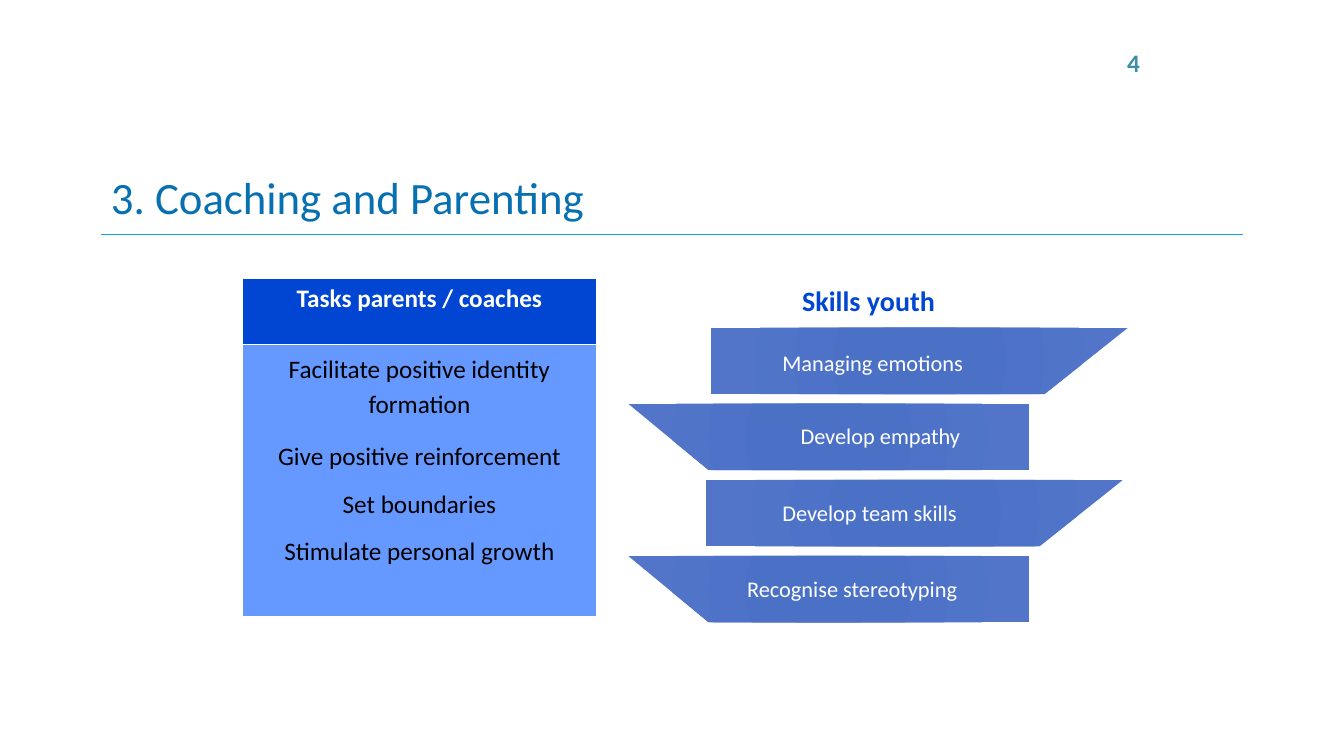
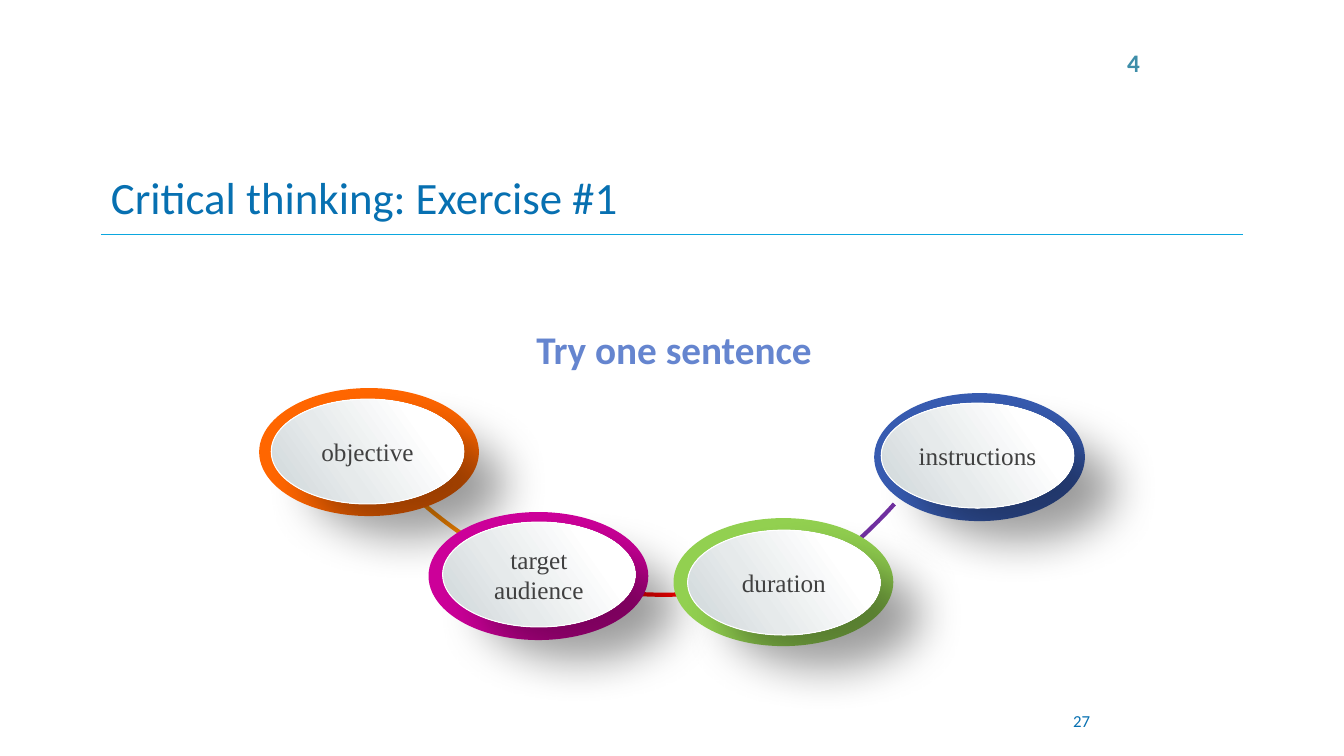
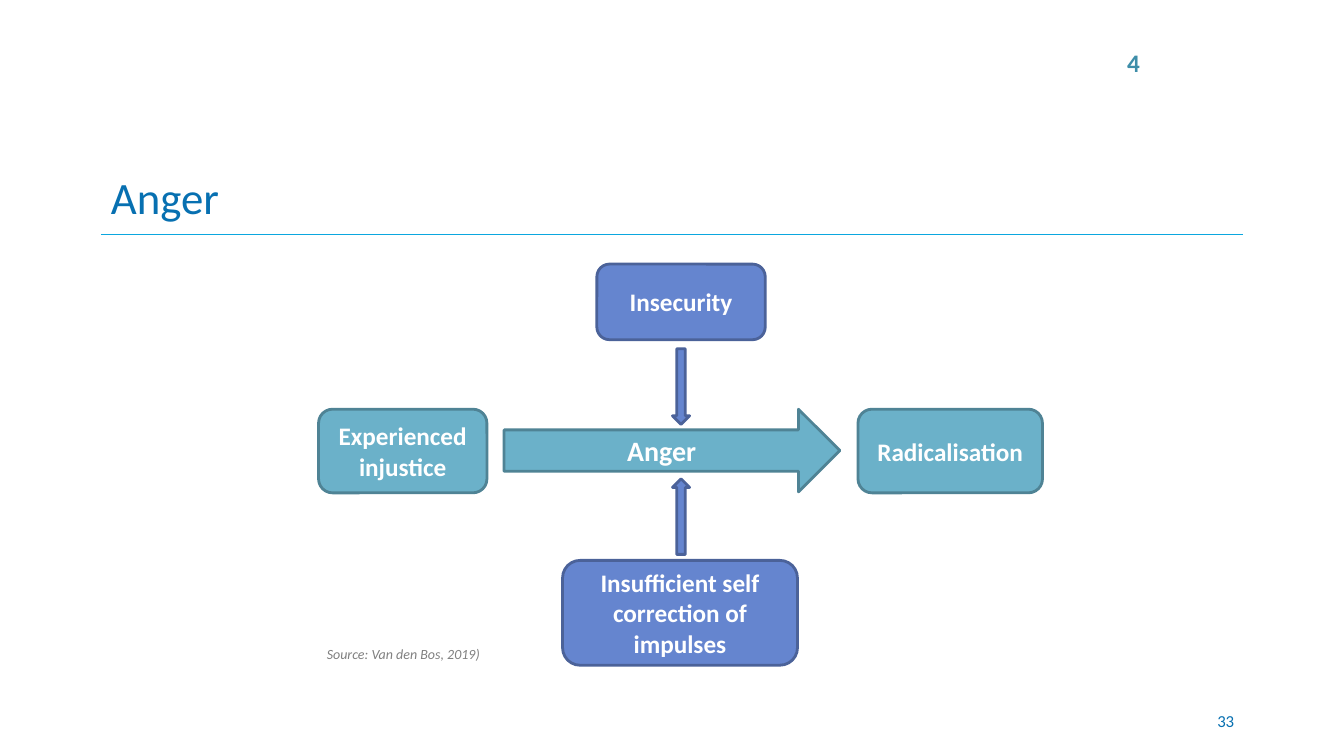
from dataclasses import dataclass

from lxml import etree
from pptx import Presentation
from pptx.dml.color import RGBColor
from pptx.enum import shapes, text
from pptx.oxml import ns, parse_xml
from pptx.util import Inches, Pt

SHAPE = shapes.MSO_SHAPE
ALIGN = text.PP_ALIGN
ANCHOR = text.MSO_ANCHOR


@dataclass(frozen=True)
class Theme:
    # Fonts and sizes
    font: str = "Calibri"
    serif: str = "Times New Roman"
    title: int = 32
    callout: int = 28
    heading: int = 20
    body: int = 18
    label: int = 16
    page: int = 12
    source: int = 10
    # Colours
    title_blue: str = "0770B1"
    rule_blue: str = "0BA7DF"
    marker: str = "3E8EA9"
    strong_blue: str = "0046D2"
    light_blue: str = "6699FF"
    periwinkle: str = "6585CF"
    periwinkle_edge: str = "4B6299"
    teal: str = "6BB1C9"
    teal_edge: str = "4F8395"
    white: str = "FFFFFF"
    black: str = "000000"
    grey: str = "808080"
    dark_grey: str = "404040"
    banner_stops: tuple = ((0, "4B71C7"), (23, "4B71C7"), (95, "5375C9"))
    bubble_stops: tuple = ((0, "CDD5D8"), (37, "E6EAEB"), (77, "FFFFFF"), (100, "FFFFFF"))


THEME = Theme()
RADIAL = '<a:path path="circle"><a:fillToRect l="50000" t="50000" r="50000" b="50000"/></a:path>'
DIAGONAL = '<a:lin ang="19500000" scaled="0"/>'


# ---- Formatting helpers ----
def rgb(value):
    return RGBColor.from_string(value)


def box(*lengths):
    return [Inches(length) for length in lengths]


def format_text(frame, size, color, bold=False, italic=False, font=THEME.font, align=ALIGN.LEFT):
    for paragraph in frame.paragraphs:
        paragraph.alignment = align
        for run in paragraph.runs:
            run.font.name = font
            run.font.size = Pt(size)
            run.font.bold = bold
            run.font.italic = italic
            run.font.color.rgb = rgb(color)


def set_margins(frame, margin):
    frame.margin_left = frame.margin_right = Inches(margin)
    frame.margin_top = frame.margin_bottom = Inches(margin)


def paint(shape, fill=None, line=None, width=2):
    shape.shadow.inherit = False
    if fill:
        shape.fill.solid()
        shape.fill.fore_color.rgb = rgb(fill)
    else:
        shape.fill.background()
    if line:
        shape.line.color.rgb = rgb(line)
        shape.line.width = Pt(width)
    else:
        shape.line.fill.background()


def paint_gradient(shape, stops, direction):
    shape.fill.gradient()
    properties = shape._element.spPr
    stop_xml = "".join(
        f'<a:gs pos="{position * 1000}"><a:srgbClr val="{color}"/></a:gs>'
        for position, color in stops)
    gradient = parse_xml(f'<a:gradFill {ns.nsdecls("a")} rotWithShape="1">'
                         f"<a:gsLst>{stop_xml}</a:gsLst>{direction}</a:gradFill>")
    properties.replace(properties.find(ns.qn("a:gradFill")), gradient)


def cast_shadow(shape):
    effects = shape._element.spPr.find(ns.qn("a:effectLst"))
    effects.append(parse_xml(
        f'<a:outerShdw {ns.nsdecls("a")} blurRad="{Pt(33)}" dist="{Pt(36.7)}" '
        'dir="2340000" algn="ctr" rotWithShape="0">'
        f'<a:srgbClr val="{THEME.black}"><a:alpha val="38000"/></a:srgbClr></a:outerShdw>'))


# ---- Elements ----
def add_text(slide, place, words, size, color, wrap=True, margin=None,
             anchor=ANCHOR.TOP, **style):
    frame = slide.shapes.add_textbox(*box(*place)).text_frame
    frame.word_wrap = wrap
    frame.vertical_anchor = anchor
    if margin is not None:
        set_margins(frame, margin)
    frame.text = words
    format_text(frame, size, color, **style)


def add_block(slide, kind, place, fill, line=None, words="", size=THEME.body):
    shape = slide.shapes.add_shape(kind, *box(*place))
    paint(shape, fill, line)
    if words:
        frame = shape.text_frame
        frame.text = words
        frame.vertical_anchor = ANCHOR.MIDDLE
        format_text(frame, size, THEME.white, bold=True, align=ALIGN.CENTER)
    return shape


def add_outline(slide, points, close):
    corners = [box(*point) for point in points]
    builder = slide.shapes.build_freeform(*corners[0], scale=1.0)
    builder.add_line_segments(corners[1:], close=close)
    return builder.convert_to_shape()


def add_banner(slide, top, wide, narrow, label_place, label):
    """Wide and narrow are (left, right) of the upper and lower edges."""
    bottom = top + 0.66
    points = [(wide[0], top), (wide[1], top), (narrow[1], bottom), (narrow[0], bottom)]
    banner = add_outline(slide, points, close=True)
    paint(banner)
    paint_gradient(banner, THEME.banner_stops, RADIAL)
    add_text(slide, (*label_place, 2.6, 0.35), label, THEME.label, THEME.white, margin=0.04)


def add_curve(slide, start, control_1, control_2, end, color, steps=12):
    points = []
    for step in range(steps + 1):
        t = step / steps
        weights = ((1 - t) ** 3, 3 * t * (1 - t) ** 2, 3 * t ** 2 * (1 - t), t ** 3)
        points.append([sum(w * p[axis] for w, p in zip(weights, (start, control_1, control_2, end)))
                       for axis in (0, 1)])
    paint(add_outline(slide, points, close=False), line=color, width=3)


def add_bubble(slide, ring_place, inner_corner, color, label):
    add_block(slide, SHAPE.OVAL, (*ring_place, 1.27), color)
    inner = add_block(slide, SHAPE.OVAL, (*inner_corner, 1.91, 1.04), None, THEME.white)
    inner.line.width = Pt(0.75)
    paint_gradient(inner, THEME.bubble_stops, DIAGONAL)
    cast_shadow(inner)
    frame = inner.text_frame
    set_margins(frame, 0)
    frame.vertical_anchor = ANCHOR.MIDDLE
    frame.text = label
    format_text(frame, THEME.body, THEME.dark_grey, font=THEME.serif, align=ALIGN.CENTER)


def add_task_table(slide, heading, tasks):
    table = slide.shapes.add_table(2, 1, *box(2.4, 2.76, 3.52, 3.36)).table
    table.rows[0].height, table.rows[1].height = box(0.66, 2.7)
    rows = ((heading, THEME.strong_blue, THEME.white, True),
            ("\n".join(tasks), THEME.light_blue, THEME.black, False))
    for index, (words, fill, color, bold) in enumerate(rows):
        cell = table.cell(index, 0)
        cell.fill.solid()
        cell.fill.fore_color.rgb = rgb(fill)
        cell.text_frame.text = words
        format_text(cell.text_frame, THEME.body, color, bold=bold, align=ALIGN.CENTER)
    paragraphs = table.cell(1, 0).text_frame.paragraphs
    for paragraph in paragraphs:
        paragraph.space_after = Pt(12)
    for paragraph in paragraphs[:2]:
        paragraph.line_spacing = 1.15


def add_page_number(slide, number, right):
    add_text(slide, (right - 2.08, 6.95, 2.08, 0.4), number, THEME.page, THEME.title_blue,
             anchor=ANCHOR.MIDDLE, align=ALIGN.RIGHT)


def start_slide(presentation, title):
    """Title, rule and corner marker shared by every slide."""
    slide = presentation.slides.add_slide(presentation.slide_layouts[5])
    heading = slide.shapes.title
    heading.left, heading.top, heading.width, heading.height = box(1, 1.58, 11.33, 0.75)
    heading.text_frame.text = title
    heading.text_frame.vertical_anchor = ANCHOR.MIDDLE
    format_text(heading.text_frame, THEME.title, THEME.title_blue)
    rule = slide.shapes.add_connector(shapes.MSO_CONNECTOR.STRAIGHT, *box(1, 2.33, 12.33, 2.33))
    rule.line.color.rgb = rgb(THEME.rule_blue)
    rule.line.width = Pt(0.75)
    etree.SubElement(rule._element.spPr, ns.qn("a:effectLst"))
    add_text(slide, (11.08, 0.42, 0.33, 0.4), "4", THEME.body, THEME.marker,
             wrap=False, bold=True)
    return slide


# ---- Slides ----
def build_parenting(presentation):
    slide = start_slide(presentation, "3. Coaching and Parenting")
    right_edges = ((7.05, 11.19), (7.05, 10.36))
    left_edges = ((6.23, 10.21), (7.03, 10.21))
    team_edges = ((7, 11.14), (7, 10.31))
    banners = (
        (right_edges, (7.72, 3.42), "Managing emotions"),
        (left_edges, (7.9, 4.15), "Develop empathy"),
        (team_edges, (7.72, 4.91), "Develop team skills"),
        (left_edges, (7.37, 5.67), "Recognise stereotyping"),
    )
    for index, (edges, label_place, label) in enumerate(banners):
        add_banner(slide, 3.25 + index * 0.755, *edges, label_place, label)
    add_task_table(slide, "Tasks parents / coaches", (
        "Facilitate positive identity formation",
        "Give positive reinforcement",
        "Set boundaries",
        "Stimulate personal growth",
    ))
    add_text(slide, (7.05, 2.76, 3.13, 0.44), "Skills youth", THEME.heading,
             THEME.strong_blue, bold=True, align=ALIGN.CENTER)


def build_exercise(presentation):
    slide = start_slide(presentation, "Critical thinking: Exercise #1")
    # Links lie behind the bubbles they join
    add_curve(slide, (8.87, 5), (8.72, 5.17), (8.54, 5.34), (8.35, 5.5), "7030A0")
    add_curve(slide, (8.35, 5.49), (8.17, 5.61), (7.98, 5.71), (7.77, 5.79), "7030A0")
    add_bubble(slide, (8.67, 3.9, 2.09), (8.74, 4), "375BB0", "instructions")
    add_curve(slide, (6.16, 5.88), (6.49, 5.91), (6.82, 5.91), (7.15, 5.86), "FF0000")
    add_curve(slide, (4.13, 4.94), (4.35, 5.14), (4.6, 5.32), (4.89, 5.5), "FF8A00")
    add_bubble(slide, (2.57, 3.85, 2.18), (2.69, 3.96), "FF6600", "objective")
    add_bubble(slide, (4.25, 5.08, 2.18), (4.39, 5.18), "CC0099", "target audience")
    add_bubble(slide, (6.68, 5.14, 2.18), (6.82, 5.26), "92D050", "duration")
    add_text(slide, (5.2, 3.18, 2.97, 0.57), "Try one sentence", THEME.callout,
             THEME.periwinkle, wrap=False, bold=True, align=ALIGN.CENTER)
    add_page_number(slide, "27", right=10.91)


def build_anger(presentation):
    slide = start_slide(presentation, "Anger")
    teal = (THEME.teal, THEME.teal_edge)
    blue = (THEME.periwinkle, THEME.periwinkle_edge)
    rounded = SHAPE.ROUNDED_RECTANGLE
    # Main path from left to right
    add_block(slide, rounded, (3.16, 4.06, 1.67, 0.83), *teal, "Experienced injustice")
    add_block(slide, SHAPE.RIGHT_ARROW, (5, 4.06, 3.33, 0.82), *teal, "Anger", THEME.heading)
    add_block(slide, rounded, (8.51, 4.06, 1.83, 0.83), *teal, "Radicalisation")
    # Influences from above and below
    add_block(slide, rounded, (5.92, 2.62, 1.67, 0.75), *blue, "Insecurity")
    add_block(slide, SHAPE.DOWN_ARROW, (6.67, 3.46, 0.17, 0.75), *blue)
    add_block(slide, SHAPE.UP_ARROW, (6.67, 4.75, 0.17, 0.75), *blue)
    add_block(slide, rounded, (5.58, 5.56, 2.33, 1.04), *blue,
              "Insufficient self correction of impulses")
    add_text(slide, (2.62, 6.35, 2.76, 0.27), "Source: Van den Bos, 2019)", THEME.source,
             THEME.grey, italic=True, align=ALIGN.CENTER)
    add_page_number(slide, "33", right=12.34)


def main():
    presentation = Presentation()
    presentation.slide_width, presentation.slide_height = box(13.33, 7.5)
    build_parenting(presentation)
    build_exercise(presentation)
    build_anger(presentation)
    presentation.save("out.pptx")


if __name__ == "__main__":
    main()
